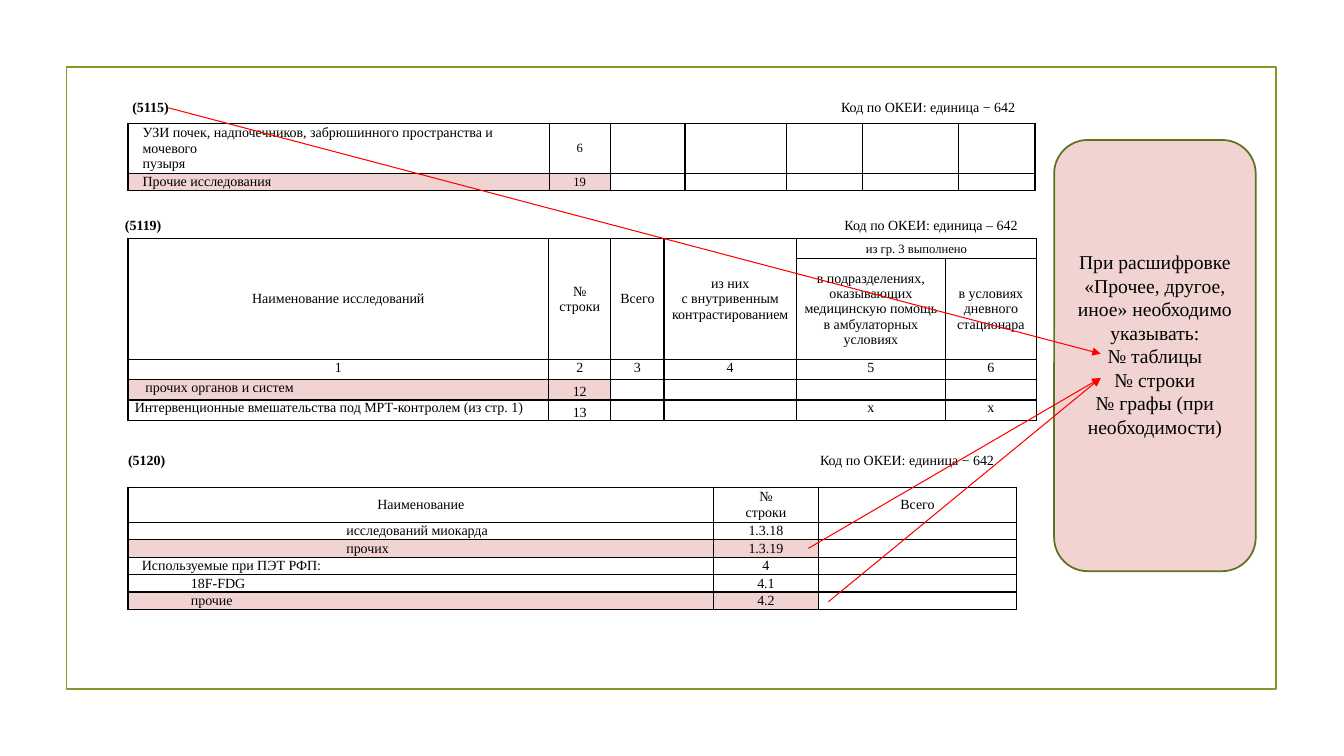
from lxml import etree
from pptx import Presentation
from pptx.dml.color import RGBColor
from pptx.enum import shapes, text
from pptx.oxml import parse_xml
from pptx.oxml.ns import nsdecls, qn
from pptx.util import Pt

FONT = "Times New Roman"
BLACK, PINK, OLIVE, MOSS, RED = "000000", "F1D4D2", "83992A", "61711F", "FF0000"
LEFT, CENTER = text.PP_ALIGN.LEFT, text.PP_ALIGN.CENTER
TOP, MIDDLE, BOTTOM = (text.MSO_ANCHOR.TOP, text.MSO_ANCHOR.MIDDLE,
                       text.MSO_ANCHOR.BOTTOM)
TABLE_LEFT = 91.4


def color(value):
    return RGBColor.from_string(value)


def add_grid(top, widths, heights, rows, pink_rows, inset):
    """Add a black-ruled table whose first two cells are pink in pink_rows."""
    grid = page.shapes.add_table(
        len(heights), len(widths), Pt(TABLE_LEFT), Pt(top),
        Pt(sum(widths)), Pt(sum(heights))).table
    grid.first_row = grid.horz_banding = False
    for column, width in zip(grid.columns, widths):
        column.width = Pt(width)
    for r, height in enumerate(heights):
        grid.rows[r].height = Pt(height)
        for c in range(len(widths)):
            cell = grid.cell(r, c)
            cell.margin_left = cell.margin_right = Pt(inset)
            cell.margin_top = cell.margin_bottom = 0
            cell.vertical_anchor = MIDDLE
            cell.text_frame.text = rows[r][c] if c < len(rows[r]) else ""
            para = cell.text_frame.paragraphs[0]
            para.alignment = CENTER
            for span in para.runs:
                span.font.name, span.font.size = FONT, Pt(10)
                span.font.color.rgb = color(BLACK)
            if not para.runs:
                etree.SubElement(para._p, qn("a:endParaRPr"), sz="900")
            for side in ("lnL", "lnR", "lnT", "lnB"):
                cell._tc.get_or_add_tcPr().append(parse_xml(
                    f'<a:{side} {nsdecls("a")} w="12700"><a:solidFill>'
                    f'<a:srgbClr val="{BLACK}"/></a:solidFill></a:{side}>'))
            if r in pink_rows and c < 2:
                cell.fill.solid()
                cell.fill.fore_color.rgb = color(PINK)
            else:
                cell.fill.background()
    return grid


deck = Presentation()
deck.slide_width, deck.slide_height = Pt(960), Pt(540)
page = deck.slides.add_slide(deck.slide_layouts[6])

frame = page.shapes.add_shape(shapes.MSO_SHAPE.RECTANGLE,
                              Pt(47.5), Pt(48), Pt(864), Pt(444))
frame.shadow.inherit = False
frame.fill.background()
frame.line.color.rgb = color(OLIVE)
frame.line.width = Pt(1.25)

# Table captions: number on the left, unit code ending at a right tab
captions = [
    ("(5115)", "Код по ОКЕИ: единица − 642", 94.5, 66.8, 725),
    ("(5119)", "Код по ОКЕИ: единица – 642", 89.3, 150.8, 726.8),
    ("(5120)", "Код по ОКЕИ: единица − 642", 91.5, 318.8, 710),
]
for number, unit, left, top, right in captions:
    box = page.shapes.add_textbox(Pt(left), Pt(top), Pt(right - left + 10), Pt(19.4))
    box.text_frame.word_wrap = True
    box.text_frame.vertical_anchor = MIDDLE
    box.text_frame.margin_left = box.text_frame.margin_right = 0
    para = box.text_frame.paragraphs[0]
    tabs = etree.SubElement(para._p.get_or_add_pPr(), qn("a:tabLst"))
    etree.SubElement(tabs, qn("a:tab"), pos=str(Pt(right - left)), algn="r")
    for words, bold in ((number, True), ("\t" + unit, False)):
        span = para.add_run()
        span.text = words
        span.font.name, span.font.size, span.font.bold = FONT, Pt(10), bold
        span.font.color.rgb = color(BLACK)

ultrasound = add_grid(
    88, [301, 43.5, 53.5, 72.5, 54.5, 68.5, 54.5], [36, 12],
    [["УЗИ почек, надпочечников, забрюшинного пространства и мочевого\vпузыря", "6"],
     ["Прочие исследования", "19"]],
    pink_rows=[1], inset=5)

mri = add_grid(
    170.5, [300.5, 44.5, 38, 94.5, 106.5, 65], [14.4, 72, 14.4, 14.4, 14.4],
    [["Наименование исследований", "№\vстроки", "Всего",
      "из них\vс внутривенным контрастированием", "из гр. 3 выполнено"],
     ["", "", "", "",
      "в подразделениях, оказывающих медицинскую помощь\vв амбулаторных условиях",
      "в условиях дневного стационара"],
     ["1", "2", "3", "4", "5", "6"],
     ["прочих органов и систем", "12"],
     ["Интервенционные вмешательства под МРТ-контролем (из стр. 1)", "13",
      "", "", "x", "x"]],
    pink_rows=[3], inset=5)
for c in range(4):
    mri.cell(0, c).merge(mri.cell(1, c))
mri.cell(0, 4).merge(mri.cell(0, 5))
for r in (2, 3, 4):
    for c in range(6):
        mri.cell(r, c).vertical_anchor = BOTTOM if r > 2 and c == 1 else TOP

pet = add_grid(
    348, [418.5, 74.5, 142], [25] + [12.5] * 5,
    [["Наименование", "№\vстроки", "Всего"],
     ["исследований миокарда", "1.3.18"],
     ["прочих", "1.3.19"],
     ["Используемые при ПЭТ РФП:", "4"],
     ["18F-FDG", "4.1"],
     ["прочие", "4.2"]],
    pink_rows=[2, 5], inset=3)

# Row names: left margins show the nesting
for grid, first, margins in ((ultrasound, 0, [10.5, 10.5]),
                             (mri, 3, [12.5, 5]),
                             (pet, 1, [156, 156, 10, 45, 45])):
    for r, margin in enumerate(margins, first):
        grid.cell(r, 0).margin_left = Pt(margin)
        grid.cell(r, 0).text_frame.paragraphs[0].alignment = LEFT
for cell in (ultrasound.cell(0, 1), ultrasound.cell(1, 1), mri.cell(0, 4)):
    cell.text_frame.paragraphs[0].runs[0].font.size = Pt(9)

card = page.shapes.add_shape(shapes.MSO_SHAPE.ROUNDED_RECTANGLE,
                             Pt(753), Pt(100), Pt(144), Pt(308))
card.shadow.inherit = False
card.fill.solid()
card.fill.fore_color.rgb = color(PINK)
card.line.color.rgb = color(MOSS)
card.line.width = Pt(1.25)
card.text_frame.word_wrap = True
card.text_frame.vertical_anchor = MIDDLE
card.text_frame.margin_bottom = Pt(20)
card.text_frame.text = "\n".join([
    "При расшифровке «Прочее, другое, иное» необходимо указывать:",
    "№ таблицы", "№ строки", "№ графы (при необходимости)"])
for para in card.text_frame.paragraphs:
    para.alignment = CENTER
    for span in para.runs:
        span.font.name, span.font.size = FONT, Pt(14)
        span.font.color.rgb = color(BLACK)

for x, y, target_y in ((120.2, 77, 252.7), (591.8, 429.8, 270), (577.4, 391.7, 270)):
    arrow = page.shapes.add_connector(shapes.MSO_CONNECTOR.STRAIGHT,
                                      Pt(x), Pt(y), Pt(786.2), Pt(target_y))
    arrow.line.color.rgb = color(RED)
    arrow.line.width = Pt(0.75)
    etree.SubElement(arrow.line._get_or_add_ln(), qn("a:tailEnd"), type="triangle")
    etree.SubElement(arrow._element.spPr, qn("a:effectLst"))

deck.save("out.pptx")
